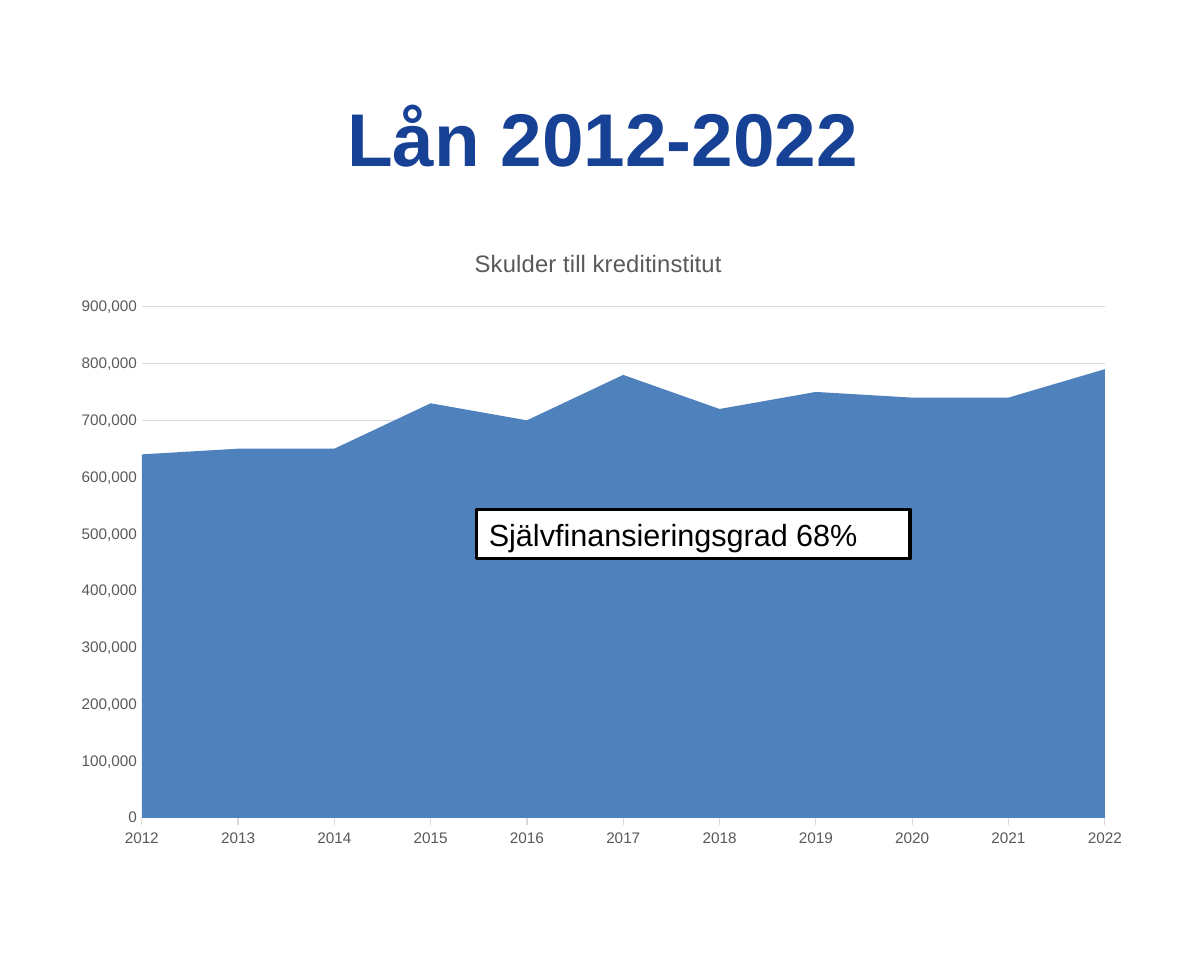
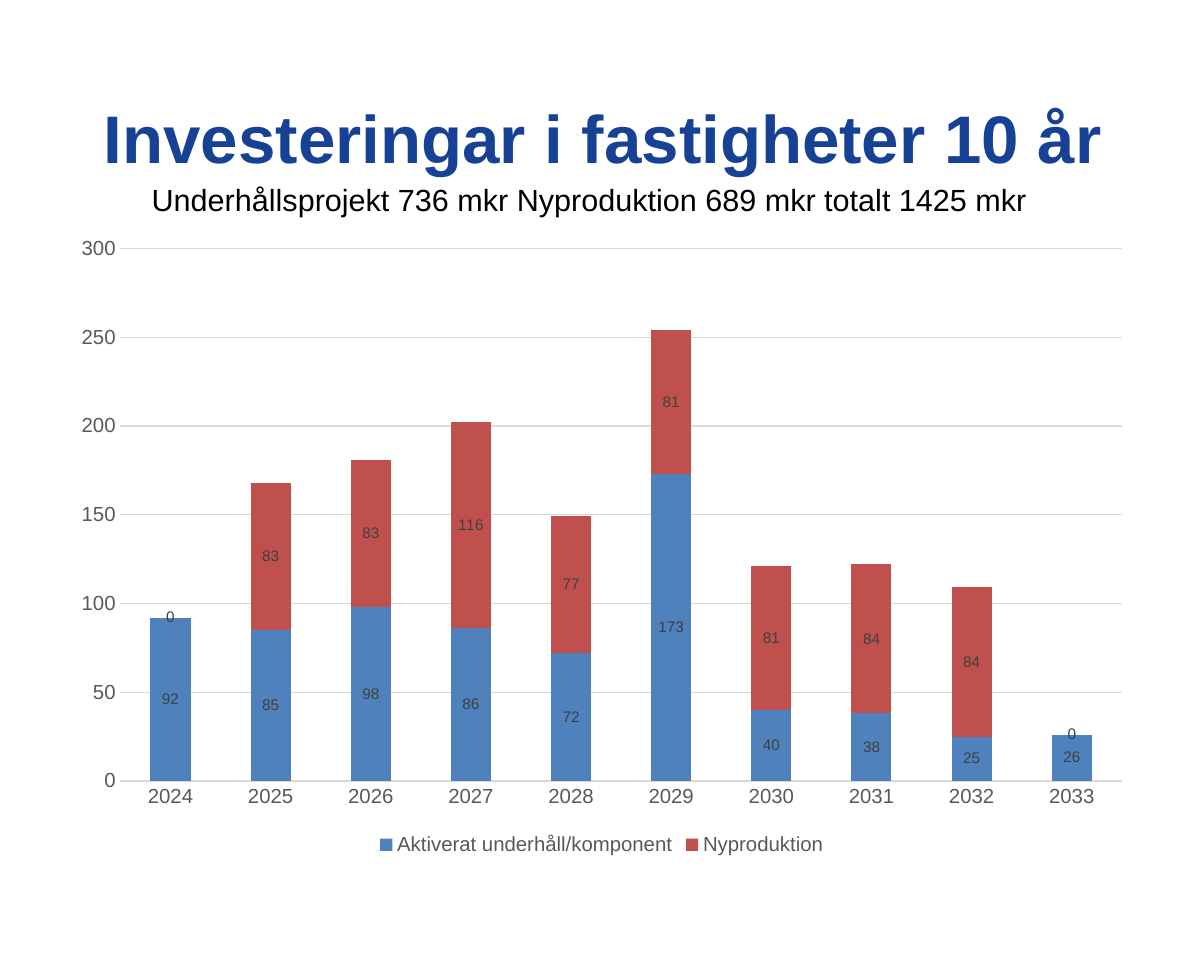
from dataclasses import dataclass
from typing import Any, Optional

import pptx
import pptx.chart.data
import pptx.dml.color
import pptx.enum.chart
import pptx.enum.shapes
import pptx.enum.text
import pptx.util

Pt = pptx.util.Pt
Align = pptx.enum.text.PP_ALIGN
Anchor = pptx.enum.text.MSO_ANCHOR
ChartType = pptx.enum.chart.XL_CHART_TYPE
TickMark = pptx.enum.chart.XL_TICK_MARK


@dataclass(frozen=True)
class Theme:
    font: str = "Arial"
    title: str = "164194"
    text: str = "000000"
    paper: str = "FFFFFF"
    muted: str = "595959"
    label: str = "404040"
    grid: str = "D9D9D9"
    series: tuple[str, ...] = ("4F81BD", "C0504D")
    body_size: float = 18
    chart_title_size: float = 14
    chart_size: float = 10
    legend_size: float = 12
    label_size: float = 9
    hairline: float = 0.75
    frame_line: float = 2
    number_format: str = "#,##0"


@dataclass(frozen=True)
class Box:
    """A place on the slide, in percent of the slide's width and height."""
    left: float
    top: float
    width: float
    height: float

    def lengths(self) -> tuple[int, int, int, int]:
        return (int(SLIDE_WIDTH * self.left / 100), int(SLIDE_HEIGHT * self.top / 100),
                int(SLIDE_WIDTH * self.width / 100), int(SLIDE_HEIGHT * self.height / 100))


@dataclass(frozen=True)
class Note:
    text: str
    box: Box
    framed: bool = False


@dataclass(frozen=True)
class ChartPage:
    title: str
    title_size: float
    chart_type: Any
    categories: range
    series: dict[str, list[int]]
    value_max: int
    value_step: int
    axis_size: float
    category_tick: Any
    note: Note
    chart_title: Optional[str] = None


THEME = Theme()
SLIDE_WIDTH = Pt(708.75)
SLIDE_HEIGHT = Pt(567)
TITLE_BOX = Box(5.08, 5.84, 90, 16.62)
CHART_BOX = Box(4.98, 23.35, 90, 66)
LOANS = "Skulder till kreditinstitut "

PAGES = [
    ChartPage(
        title="Lån 2012-2022",
        title_size=44,
        chart_type=ChartType.AREA_STACKED,
        categories=range(2012, 2023),
        series={LOANS: [
            640000, 650000, 650000, 730000, 700000, 780000,
            720000, 750000, 740000, 740000, 790000]},
        value_max=900000,
        value_step=100000,
        axis_size=9,
        category_tick=TickMark.OUTSIDE,
        note=Note("Självfinansieringsgrad 68%", Box(39.6, 52.92, 36, 5.1), framed=True),
        chart_title=LOANS,
    ),
    ChartPage(
        title="Investeringar i fastigheter 10 år",
        title_size=39.6,
        chart_type=ChartType.COLUMN_STACKED,
        categories=range(2024, 2034),
        series={
            "Aktiverat underhåll/komponent": [92, 85, 98, 86, 72, 173, 40, 38, 25, 26],
            "Nyproduktion": [0, 83, 83, 116, 77, 81, 81, 84, 84, 0],
        },
        value_max=300,
        value_step=50,
        axis_size=12,
        category_tick=TickMark.NONE,
        note=Note("Underhållsprojekt 736 mkr Nyproduktion 689 mkr totalt 1425 mkr",
                  Box(11.6, 18.16, 80.8, 5.1)),
    ),
]


def rgb(color: str) -> pptx.dml.color.RGBColor:
    return pptx.dml.color.RGBColor.from_string(color)


def style_font(font: Any, size: float, color: str, bold: bool = False) -> None:
    font.name = THEME.font
    font.size = Pt(size)
    font.bold = bold
    font.color.rgb = rgb(color)


def write_text(frame: Any, text: str, *, size: float, color: str, bold: bool = False,
               align: Any = Align.LEFT, anchor: Any = Anchor.TOP) -> None:
    frame.word_wrap = True
    frame.vertical_anchor = anchor
    para = frame.paragraphs[0]
    para.alignment = align
    span = para.add_run()
    span.text = text
    style_font(span.font, size, color, bold)


def add_title(page: Any, text: str, size: float) -> None:
    title = page.shapes.title
    title.left, title.top, title.width, title.height = TITLE_BOX.lengths()
    write_text(title.text_frame, text, size=size, color=THEME.title, bold=True,
               align=Align.CENTER, anchor=Anchor.MIDDLE)


def add_note(page: Any, note: Note) -> None:
    if note.framed:
        box = page.shapes.add_shape(pptx.enum.shapes.MSO_SHAPE.RECTANGLE, *note.box.lengths())
        box.shadow.inherit = False
        box.fill.solid()
        box.fill.fore_color.rgb = rgb(THEME.paper)
        box.line.color.rgb = rgb(THEME.text)
        box.line.width = Pt(THEME.frame_line)
    else:
        box = page.shapes.add_textbox(*note.box.lengths())
    write_text(box.text_frame, note.text, size=THEME.body_size, color=THEME.text)
    box.text_frame.auto_size = pptx.enum.text.MSO_AUTO_SIZE.SHAPE_TO_FIT_TEXT


def style_grid_line(line: Any) -> None:
    line.color.rgb = rgb(THEME.grid)
    line.width = Pt(THEME.hairline)


def style_axes(chart: Any, content: ChartPage) -> None:
    for axis in (chart.category_axis, chart.value_axis):
        axis.major_tick_mark = axis.minor_tick_mark = TickMark.NONE
        style_font(axis.tick_labels.font, content.axis_size, THEME.muted)
    chart.category_axis.major_tick_mark = content.category_tick
    chart.category_axis.has_major_gridlines = False
    style_grid_line(chart.category_axis.format.line)

    values = chart.value_axis
    values.minimum_scale = 0
    values.maximum_scale = content.value_max
    values.major_unit = content.value_step
    values.tick_labels.number_format = THEME.number_format
    values.tick_labels.number_format_is_linked = False
    values.format.line.fill.background()
    values.has_major_gridlines = True
    style_grid_line(values.major_gridlines.format.line)


def style_columns(chart: Any) -> None:
    """Set column spacing, value labels and the legend below."""
    plot = chart.plots[0]
    plot.gap_width = 150
    plot.overlap = 100
    plot.vary_by_categories = False
    for series in plot.series:
        labels = series.data_labels
        labels.show_value = True
        labels.position = pptx.enum.chart.XL_LABEL_POSITION.CENTER
        labels.number_format = THEME.number_format
        labels.number_format_is_linked = False
        style_font(labels.font, THEME.label_size, THEME.label)
    chart.has_legend = True
    chart.legend.position = pptx.enum.chart.XL_LEGEND_POSITION.BOTTOM
    chart.legend.include_in_layout = False
    style_font(chart.legend.font, THEME.legend_size, THEME.muted)


def add_chart(page: Any, content: ChartPage) -> None:
    data = pptx.chart.data.CategoryChartData(number_format=THEME.number_format)
    data.categories = [str(year) for year in content.categories]
    for name, values in content.series.items():
        data.add_series(name, values)
    chart = page.shapes.add_chart(content.chart_type, *CHART_BOX.lengths(), data).chart
    style_font(chart.font, THEME.chart_size, THEME.text)
    style_axes(chart, content)
    for series, color in zip(chart.plots[0].series, THEME.series):
        series.format.fill.solid()
        series.format.fill.fore_color.rgb = rgb(color)

    chart.has_legend = False
    chart.has_title = content.chart_title is not None
    if content.chart_title:
        write_text(chart.chart_title.text_frame, content.chart_title,
                   size=THEME.chart_title_size, color=THEME.muted, align=Align.CENTER)
        chart.chart_title.include_in_layout = False
    if content.chart_type == ChartType.COLUMN_STACKED:
        style_columns(chart)
    else:
        for crossing in chart.value_axis._element.xpath("c:crossBetween"):
            crossing.set("val", "midCat")


def main() -> None:
    deck = pptx.Presentation()
    deck.slide_width = SLIDE_WIDTH
    deck.slide_height = SLIDE_HEIGHT
    title_only = deck.slide_layouts.get_by_name("Title Only")
    for content in PAGES:
        page = deck.slides.add_slide(title_only)
        add_title(page, content.title, content.title_size)
        add_chart(page, content)
        add_note(page, content.note)
    deck.save("out.pptx")


if __name__ == "__main__":
    main()
